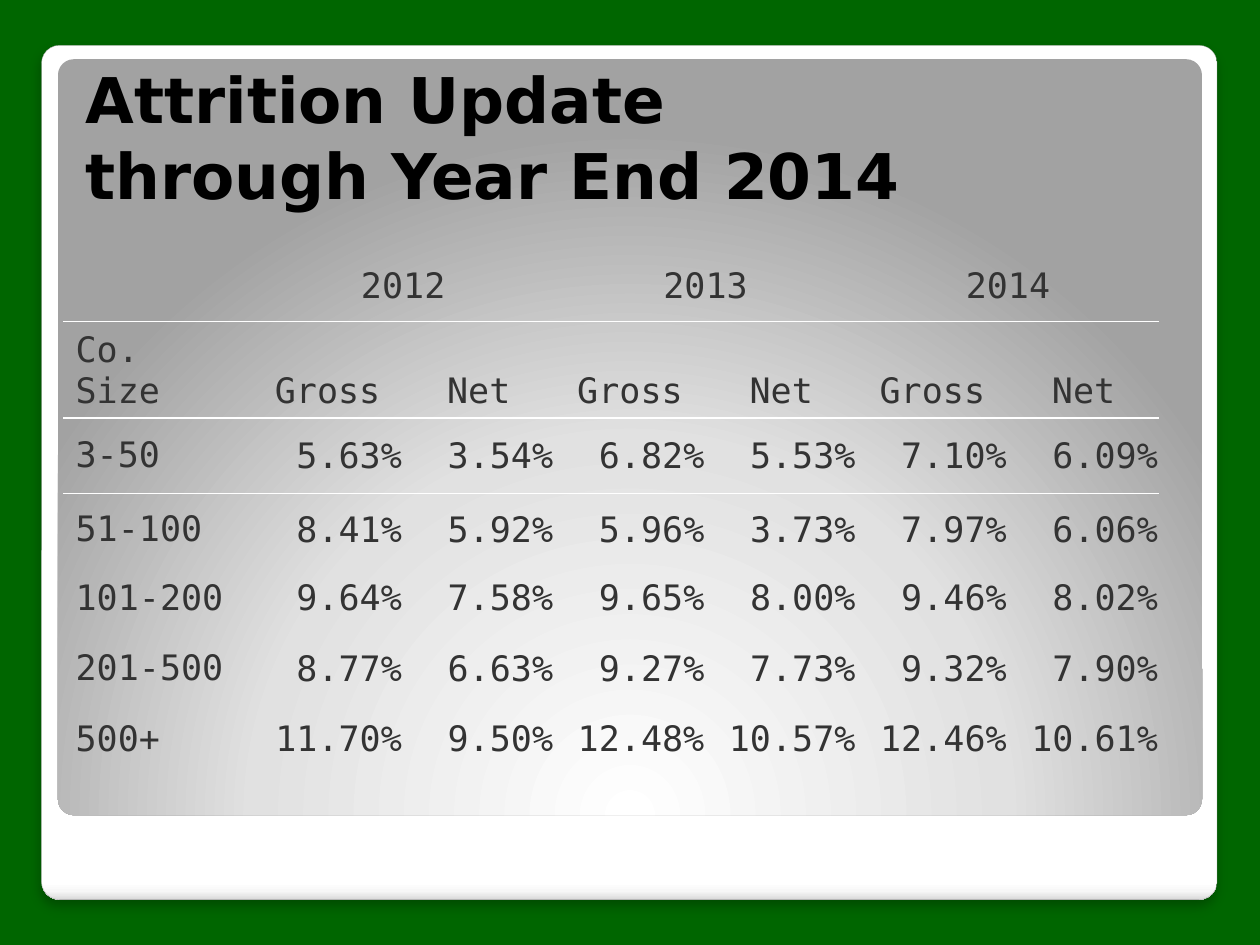
from lxml.etree import SubElement
from pptx import Presentation
from pptx.dml.color import RGBColor
from pptx.enum.shapes import MSO_SHAPE
from pptx.enum.text import MSO_ANCHOR, PP_ALIGN
from pptx.oxml import parse_xml
from pptx.oxml.ns import nsdecls, qn
from pptx.util import Inches, Pt


def rgb(value):
    return RGBColor.from_string(value)


class SlideBuilder:
    """Draw styled elements on the current slide."""

    title_font, body_font = "DejaVu Sans", "DejaVu Sans Mono"
    ink, title_ink, rule = "333333", "000000", "FFFFFF"
    plain_table = "{2D5ABB26-0587-4C30-8999-92F81FD0307C}"

    def __init__(self, slide, background):
        self.slide = slide
        slide.background.fill.solid()
        slide.background.fill.fore_color.rgb = rgb(background)

    def panel(self, box, stops, direction):
        panel = self.slide.shapes.add_shape(MSO_SHAPE.ROUNDED_RECTANGLE, *map(Inches, box))
        panel.adjustments[0] = 0.021
        panel.shadow.inherit = False
        panel.line.fill.background()
        panel.fill.background()
        colours = "".join(
            f'<a:gs pos="{position * 1000}"><a:srgbClr val="{colour}"/></a:gs>'
            for position, colour in stops
        )
        gradient = parse_xml(
            f'<a:gradFill {nsdecls("a")} rotWithShape="1"><a:gsLst>{colours}</a:gsLst>'
            f"{direction}</a:gradFill>"
        )
        properties = panel.element.spPr
        properties.replace(properties.find(qn("a:noFill")), gradient)
        return panel

    def outline(self, panel, colour, width):
        panel.line.color.rgb = rgb(colour)
        panel.line.width = Pt(width)

    def shadow(self, panel, colour, opacity, blur, distance):
        effects = panel.element.spPr.find(qn("a:effectLst"))
        effects.append(parse_xml(
            f'<a:outerShdw {nsdecls("a")} blurRad="{Pt(blur)}" dist="{Pt(distance)}" '
            f'dir="5400000" algn="t" rotWithShape="0"><a:srgbClr val="{colour}">'
            f'<a:alpha val="{opacity * 1000}"/></a:srgbClr></a:outerShdw>'
        ))

    def set_text(self, frame, text, font, size, colour, bold=False, align=PP_ALIGN.LEFT):
        frame.text = text
        for paragraph in frame.paragraphs:
            paragraph.alignment = align
            for run in paragraph.runs:
                run.font.name = font
                run.font.size = Pt(size)
                run.font.bold = bold
                run.font.color.rgb = rgb(colour)

    def title(self, box, text):
        frame = self.slide.shapes.add_textbox(*map(Inches, box)).text_frame
        frame.word_wrap = True
        frame.vertical_anchor = MSO_ANCHOR.BOTTOM
        self.set_text(frame, text, self.title_font, 36, self.title_ink, bold=True)

    def border(self, cell, side):
        line = SubElement(cell._tc.get_or_add_tcPr(), qn(f"a:{side}"), w=str(Pt(1)))
        fill = SubElement(line, qn("a:solidFill"))
        SubElement(fill, qn("a:srgbClr"), val=self.rule)

    def cell(self, cell, text, row, column):
        if 1 <= row <= 2:
            self.border(cell, "lnT")
        if row <= 1:
            self.border(cell, "lnB")
        cell.fill.background()
        cell.vertical_anchor = MSO_ANCHOR.BOTTOM if row == 1 else MSO_ANCHOR.MIDDLE
        align = PP_ALIGN.LEFT
        if column:
            align = PP_ALIGN.CENTER if row < 2 else PP_ALIGN.RIGHT
            if row >= 2:
                cell.margin_left = cell.margin_right = cell.margin_top = Inches(0.01)
                cell.margin_bottom = 0
        if text:
            self.set_text(cell.text_frame, text, self.body_font, 20, self.ink, align=align)

    def table(self, box, widths, heights, rows):
        frame = self.slide.shapes.add_table(len(rows), len(widths), *map(Inches, box))
        table = frame.table
        table.first_row = table.horz_banding = False
        next(frame.element.iter(qn("a:tableStyleId"))).text = self.plain_table
        for column, width in zip(table.columns, widths):
            column.width = Inches(width)
        for row, height in zip(table.rows, heights):
            row.height = Inches(height)
        for row, texts in enumerate(rows):
            for column, text in enumerate(texts):
                self.cell(table.cell(row, column), text, row, column)
        for column in range(1, len(widths), 2):
            table.cell(0, column).merge(table.cell(0, column + 1))


ATTRITION = [
    ["", "2012", "", "2013", "", "2014", ""],
    ["Co. Size"] + ["Gross", "Net"] * 3,
    ["3-50", "5.63%", "3.54%", "6.82%", "5.53%", "7.10%", "6.09%"],
    ["51-100", "8.41%", "5.92%", "5.96%", "3.73%", "7.97%", "6.06%"],
    ["101-200", "9.64%", "7.58%", "9.65%", "8.00%", "9.46%", "8.02%"],
    ["201-500", "8.77%", "6.63%", "9.27%", "7.73%", "9.32%", "7.90%"],
    ["500+", "11.70%", "9.50%", "12.48%", "10.57%", "12.46%", "10.61%"],
]


def main():
    presentation = Presentation()
    presentation.slide_width, presentation.slide_height = Inches(10), Inches(7.5)
    builder = SlideBuilder(presentation.slides.add_slide(presentation.slide_layouts[6]), "006600")

    card = builder.panel(
        (0.33, 0.36, 9.33, 6.78),
        [(0, "FFFFFF"), (98, "FFFFFF"), (99, "F7F7F7"), (100, "DADADA")],
        '<a:lin ang="5400000" scaled="0"/>',
    )
    builder.outline(card, "A4A4A4", 0.16)
    builder.shadow(card, "000000", opacity=25, blur=6, distance=4)
    builder.panel(
        (0.46, 0.47, 9.08, 6),
        [(0, "FFFFFF"), (55, "E1E1E1"), (100, "A2A2A2")],
        '<a:path path="circle"><a:fillToRect l="50000" t="175000" r="50000" b="-75000"/></a:path>',
    )
    builder.title((0.58, 0.58, 8.95, 1.15), "Attrition Update\vthrough Year End 2014")
    builder.table(
        (0.5, 2, 8.7, 4),
        [1.5] + [1.2] * 6,
        [0.55, 0.63, 0.6, 0.57, 0.52, 0.6, 0.52],
        ATTRITION,
    )
    presentation.save("out.pptx")


if __name__ == "__main__":
    main()
